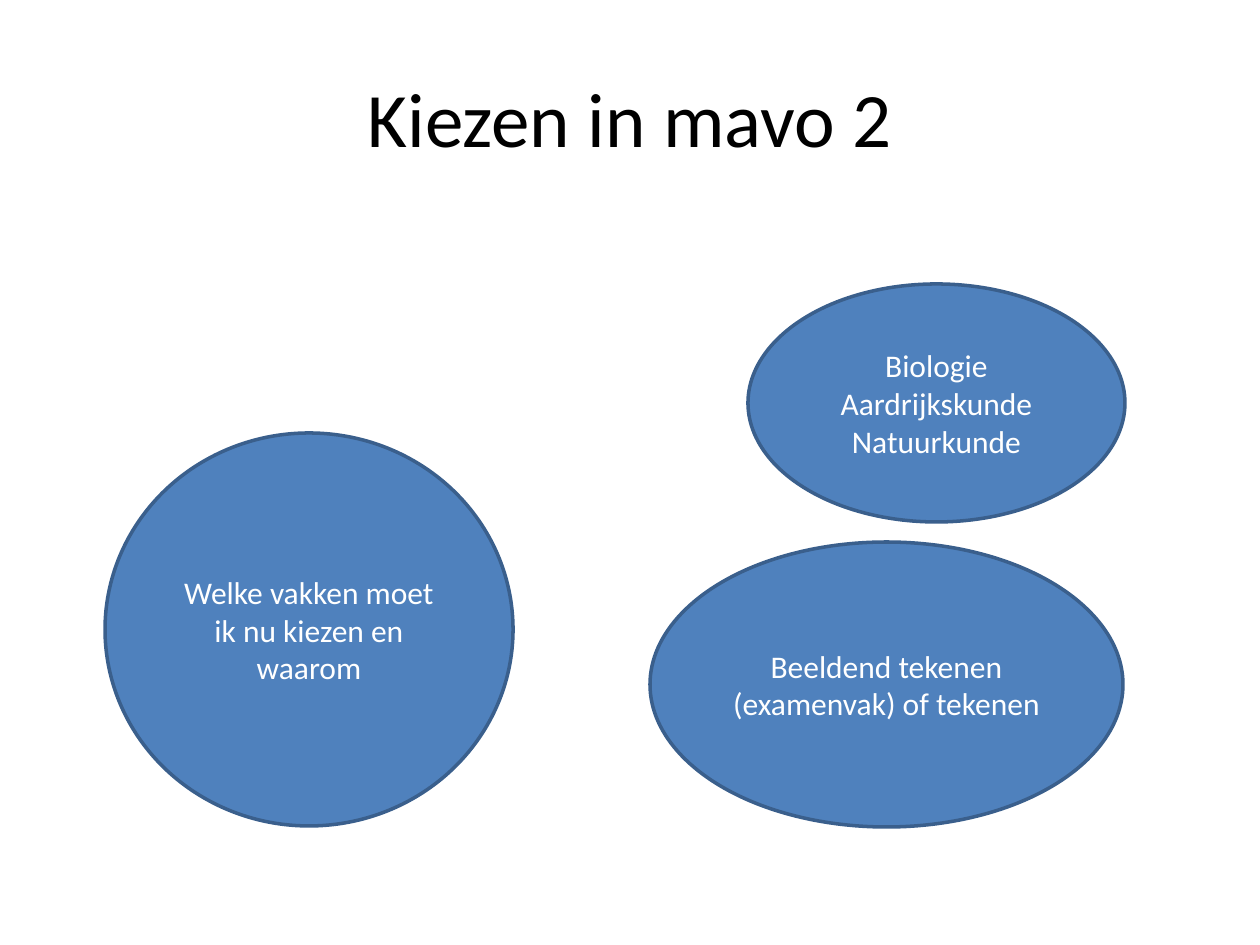
"""Build the slide on choosing subjects in mavo 2."""
from dataclasses import dataclass

import pptx
import pptx.dml.color
import pptx.enum.shapes
import pptx.enum.text
import pptx.util

EMU_PER_PX = 914400 / 126
COLORS = {"fill": "4F81BD", "line": "3A5F8C", "title": "000000", "text": "FFFFFF"}


@dataclass
class Bubble:
    box: tuple[int, int, int, int]
    lines: tuple[str, ...]


BUBBLES = (
    Bubble((105, 433, 408, 393), ("Welke vakken moet ik nu kiezen en waarom",)),
    Bubble((748, 284, 377, 238), ("Biologie", "Aardrijkskunde Natuurkunde")),
    Bubble((650, 542, 473, 285), ("Beeldend tekenen (examenvak) of tekenen",)),
)


def px(n: int) -> int:
    return round(n * EMU_PER_PX)


def rgb(name: str) -> pptx.dml.color.RGBColor:
    return pptx.dml.color.RGBColor.from_string(COLORS[name])


def set_attrs(obj: object, values: dict) -> None:
    for name, value in values.items():
        setattr(obj, name, value)


def place(sp, box: tuple[int, int, int, int]) -> None:
    set_attrs(sp, dict(zip(("left", "top", "width", "height"), map(px, box))))


def write(sp, lines: tuple[str, ...], size: int, color: str) -> None:
    tf = sp.text_frame
    set_attrs(tf, {"word_wrap": True,
                   "vertical_anchor": pptx.enum.text.MSO_ANCHOR.MIDDLE})
    tf.text = "\n".join(lines)
    for p in tf.paragraphs:
        p.alignment = pptx.enum.text.PP_ALIGN.CENTER
        for r in p.runs:
            set_attrs(r.font, {"name": "Calibri", "size": pptx.util.Pt(size)})
            r.font.color.rgb = rgb(color)


def draw_bubble(s, bubble: Bubble) -> None:
    sp = s.shapes.add_shape(pptx.enum.shapes.MSO_SHAPE.OVAL, *map(px, bubble.box))
    sp.shadow.inherit = False
    sp.fill.solid()
    sp.fill.fore_color.rgb = rgb("fill")
    sp.line.color.rgb = rgb("line")
    sp.line.width = pptx.util.Pt(2)
    write(sp, bubble.lines, 18, "text")


def main() -> None:
    prs = pptx.Presentation()
    set_attrs(prs, {"slide_width": px(1260), "slide_height": px(945)})
    s = prs.slides.add_slide(prs.slide_layouts[5])
    title = s.shapes.title
    place(title, (63, 38, 1134, 158))
    write(title, ("Kiezen in mavo 2",), 44, "title")
    for bubble in BUBBLES:
        draw_bubble(s, bubble)
    prs.save("out.pptx")


if __name__ == "__main__":
    main()
